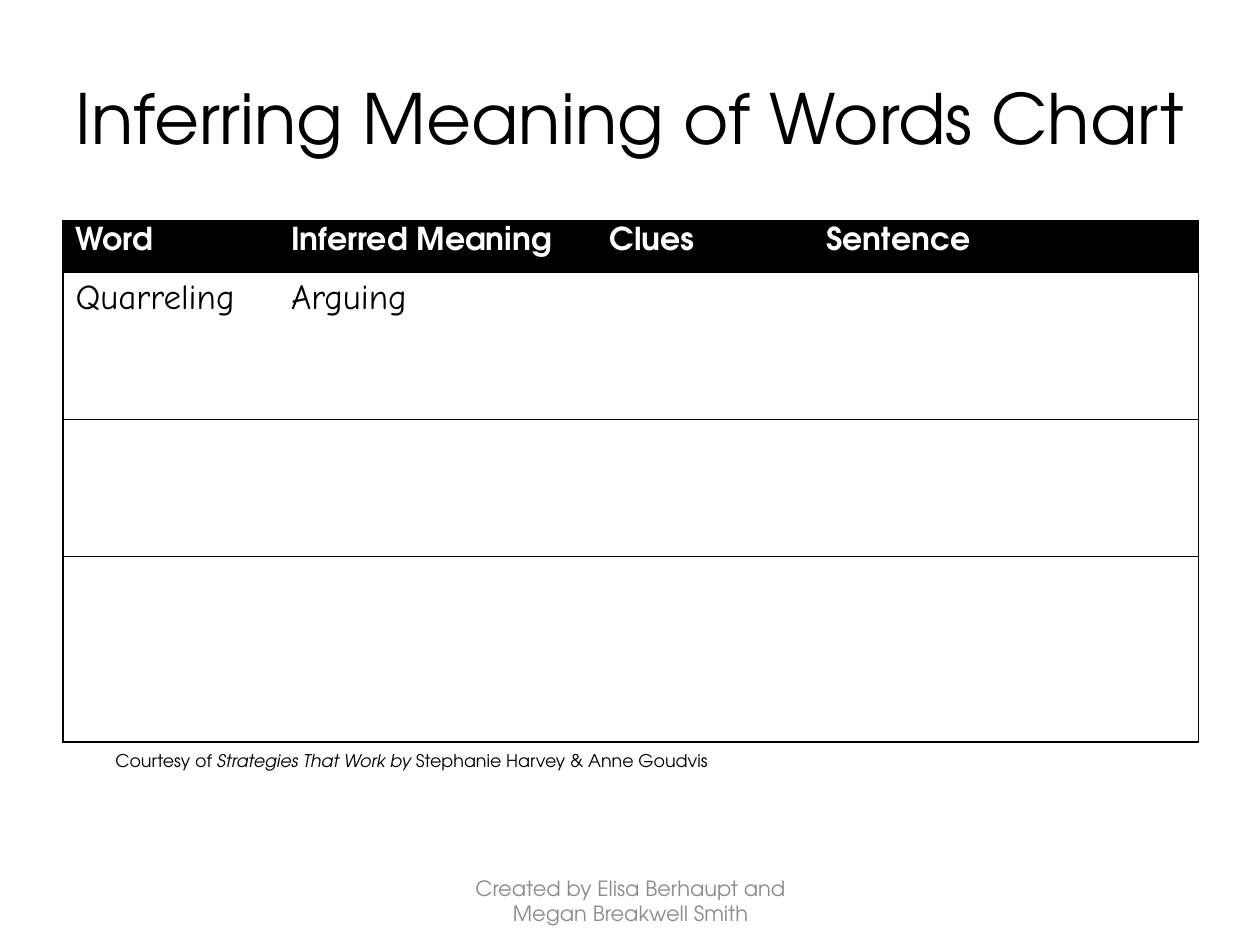
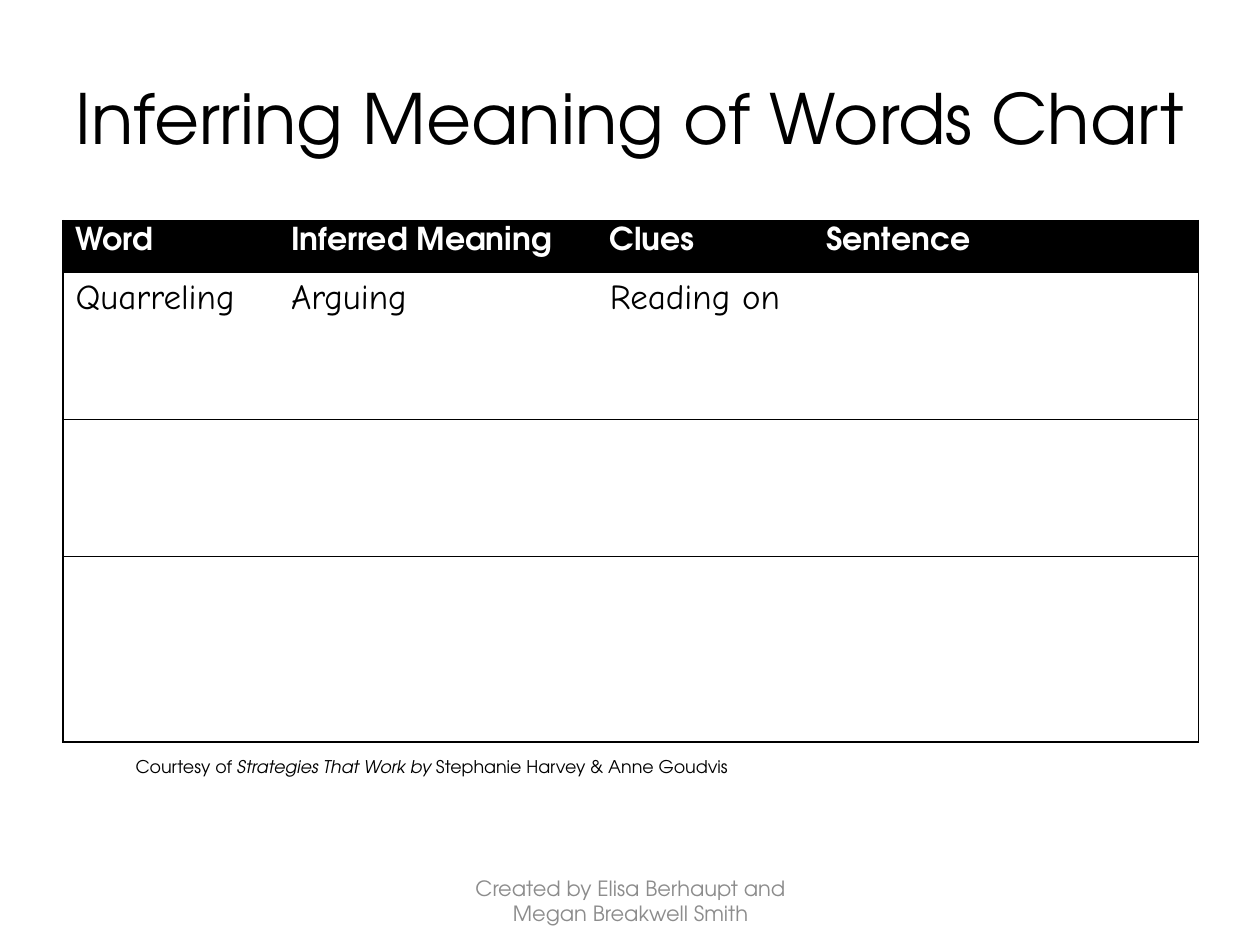
"""Build the word-inference chart slides."""
import dataclasses

import lxml.etree
import pptx
import pptx.dml.color
import pptx.enum.text
import pptx.oxml
import pptx.oxml.ns
import pptx.util

Inches = pptx.util.Inches
Pt = pptx.util.Pt
RGB = pptx.dml.color.RGBColor.from_string
qn = pptx.oxml.ns.qn
ALIGN = pptx.enum.text.PP_ALIGN
ANCHOR = pptx.enum.text.MSO_ANCHOR


@dataclasses.dataclass(frozen=True)
class Theme:
    """Colours, fonts and type sizes shared by the slides."""
    ink: str = "000000"
    paper: str = "FFFFFF"
    muted: str = "8C8C8C"
    font: str = "TeX Gyre Adventor"
    hand: str = "Comic Neue"
    title: float = 39.6
    header: float = 18
    entry: float = 20
    footer: float = 12
    credit: float = 10
    rule: float = 0.75


THEME = Theme()
TITLE = "Inferring Meaning of Words Chart"
FOOTER = "Created by Elisa Berhaupt and Megan Breakwell Smith"
CREDIT = [("Courtesy of ", False), ("Strategies That Work by ", True),
          ("Stephanie Harvey & Anne Goudvis", False)]
HEADERS = ["Word", "Inferred Meaning", "Clues", "Sentence"]
COL_WIDTHS = [1.71, 2.53, 1.72, 3.05]
ROW_HEIGHTS = [0.41, 1.17, 1.09, 1.47]
NO_STYLE = "{2D5ABB26-0587-4C30-8999-92F81FD0307C}"
TITLE_BOX = (0.5, 0.3, 9, 1.25)
TABLE_BOX = (0.5, 1.75, 9, 4.14)
FOOTER_BOX = (3.42, 6.95, 3.17, 0.4)
SLIDES = [
    (["Quarreling", "Arguing"], (0.34, 5.61, 5.85, 1.04)),
    (["Quarreling", "Arguing", "Reading on"], (0.5, 5.66, 5.85, 1.04)),
]


def style(p, size, color, font=THEME.font, bold=False, align=None):
    """Set the font and alignment of a paragraph."""
    p.font.name, p.font.size, p.font.bold = font, Pt(size), bold
    p.font.color.rgb = RGB(color)
    p.alignment = align


def add_title(slide, box):
    """Place and format the title placeholder."""
    sp = slide.shapes.title
    sp.left, sp.top, sp.width, sp.height = map(Inches, box)
    tf = sp.text_frame
    tf.text = TITLE
    tf.auto_size = pptx.enum.text.MSO_AUTO_SIZE.NONE
    tf.vertical_anchor = ANCHOR.MIDDLE
    tf.margin_left = tf.margin_right = Inches(0.05)
    style(tf.paragraphs[0], THEME.title, THEME.ink, align=ALIGN.CENTER)


def add_textbox(slide, box):
    """Add a wrapping text box and return its text frame."""
    tf = slide.shapes.add_textbox(*map(Inches, box)).text_frame
    tf.word_wrap = True
    return tf


def set_borders(cell, sides):
    """Draw the theme rule on the given sides (L, R, T, B) of a cell."""
    tc_pr = cell._tc.get_or_add_tcPr()
    for side in "LRTB":
        ln = lxml.etree.SubElement(tc_pr, qn(f"a:ln{side}"), w=str(Pt(THEME.rule)))
        if side in sides:
            fill = lxml.etree.SubElement(ln, qn("a:solidFill"))
            lxml.etree.SubElement(fill, qn("a:srgbClr"), val=THEME.ink)
        else:
            lxml.etree.SubElement(ln, qn("a:noFill"))


def add_word_table(slide, box, entries):
    """Add the word table with its header and the entries of the first row."""
    rows, cols = len(ROW_HEIGHTS), len(COL_WIDTHS)
    table = slide.shapes.add_table(rows, cols, *map(Inches, box)).table
    table.first_row = table.horz_banding = False
    table._tbl.tblPr.find(qn("a:tableStyleId")).text = NO_STYLE
    for col, width in zip(table.columns, COL_WIDTHS):
        col.width = Inches(width)
    for row, height in zip(table.rows, ROW_HEIGHTS):
        row.height = Inches(height)
    for r in range(rows):
        for c in range(cols):
            cell = table.cell(r, c)
            set_borders(cell, "TB" + "L" * (c == 0) + "R" * (c == cols - 1))
            if r == 0:
                cell.fill.solid()
                cell.fill.fore_color.rgb = RGB(THEME.ink)
            else:
                cell.fill.background()
    for c, text in enumerate(HEADERS):
        table.cell(0, c).text = text
        style(table.cell(0, c).text_frame.paragraphs[0], THEME.header,
              THEME.paper, bold=True)
    for c, text in enumerate(entries):
        table.cell(1, c).text = text
        style(table.cell(1, c).text_frame.paragraphs[0], THEME.entry,
              THEME.ink, THEME.hand)


def add_footer(slide, box):
    """Add the centred authors' line."""
    tf = add_textbox(slide, box)
    tf.vertical_anchor = ANCHOR.MIDDLE
    tf.text = FOOTER
    style(tf.paragraphs[0], THEME.footer, THEME.muted, align=ALIGN.CENTER)


def add_credit(slide, box):
    """Add the source credit with its book title in italics."""
    tf = add_textbox(slide, box)
    tf.margin_top = Inches(0.34)
    p = tf.paragraphs[0]
    style(p, THEME.credit, THEME.ink, align=ALIGN.CENTER)
    for text, italic in CREDIT:
        r = p.add_run()
        r.text, r.font.italic = text, italic


def add_chart_slide(prs, entries, credit_box):
    """Add one word chart slide."""
    slide = prs.slides.add_slide(prs.slide_layouts.get_by_name("Title Only"))
    add_title(slide, TITLE_BOX)
    add_word_table(slide, TABLE_BOX, entries)
    add_footer(slide, FOOTER_BOX)
    add_credit(slide, credit_box)


def main():
    """Build and save the presentation."""
    prs = pptx.Presentation()
    prs.slide_width, prs.slide_height = Inches(10), Inches(7.5)
    for entries, credit_box in SLIDES:
        add_chart_slide(prs, entries, credit_box)
    prs.save("out.pptx")


if __name__ == "__main__":
    main()
